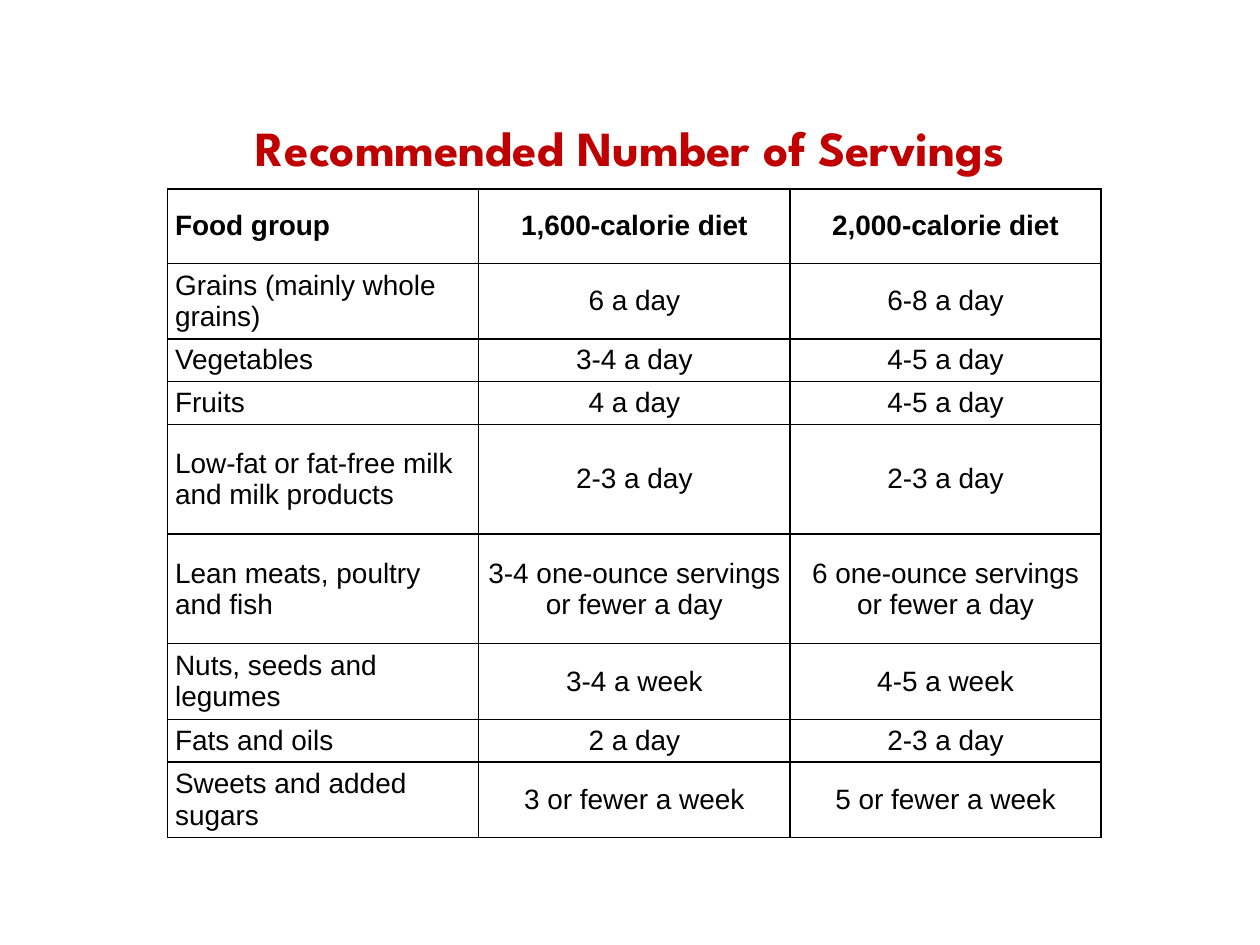
"""Build a slide with a table of recommended food servings."""
from lxml.etree import SubElement
from pptx import Presentation
from pptx.dml.color import RGBColor
from pptx.enum.text import MSO_ANCHOR, PP_ALIGN
from pptx.oxml.ns import qn
from pptx.util import Inches, Pt

TITLE = "Recommended Number of Servings"
ROWS = [
    (0.59, "Food group", "1,600-calorie diet", "2,000-calorie diet"),
    (0.6, "Grains (mainly whole grains)", "6 a day", "6-8 a day"),
    (0.34, "Vegetables", "3-4 a day", "4-5 a day"),
    (0.34, "Fruits", "4 a day", "4-5 a day"),
    (0.87, "Low-fat or fat-free milk and milk products", "2-3 a day", "2-3 a day"),
    (0.87, "Lean meats, poultry and fish", "3-4 one-ounce servings or fewer a day",
     "6 one-ounce servings or fewer a day"),
    (0.6, "Nuts, seeds and legumes", "3-4 a week", "4-5 a week"),
    (0.34, "Fats and oils", "2 a day", "2-3 a day"),
    (0.6, "Sweets and added sugars", "3 or fewer a week", "5 or fewer a week"),
]
COL_WIDTH = 2.47
TITLE_FONT = {"name": "League Spartan", "size": Pt(28), "bold": True}
CELL_FONT = {"name": "Arial", "size": Pt(16)}
CELL_FORMAT = {
    "vertical_anchor": MSO_ANCHOR.MIDDLE,
    "margin_left": Inches(0.06), "margin_right": Inches(0.06),
    "margin_top": Inches(0.03), "margin_bottom": Inches(0.03),
}


def set_attrs(obj, values):
    for name, value in values.items():
        setattr(obj, name, value)


def set_color(color, value):
    color.rgb = RGBColor.from_string(value)


def write(tf, text, font, color, align):
    p = tf.paragraphs[0]
    p.alignment = align
    r = p.add_run()
    r.text = text
    set_attrs(r.font, font)
    set_color(r.font.color, color)


def add_borders(cell, color="000000", width=Pt(1)):
    tc_pr = cell._tc.get_or_add_tcPr()
    for i, side in enumerate(("lnL", "lnR", "lnT", "lnB")):
        ln = SubElement(tc_pr, qn(f"a:{side}"), w=str(int(width)))
        fill = SubElement(ln, qn("a:solidFill"))
        SubElement(fill, qn("a:srgbClr"), val=color)
        tc_pr.insert(i, ln)


def add_title(s):
    sp = s.shapes.add_textbox(Inches(1), Inches(0.75), Inches(8), Inches(0.83))
    tf = sp.text_frame
    set_attrs(tf, {"word_wrap": True, "vertical_anchor": MSO_ANCHOR.MIDDLE})
    write(tf, TITLE, TITLE_FONT, "C00000", PP_ALIGN.CENTER)


def add_servings(s):
    n_cols = len(ROWS[0]) - 1
    height = sum(row[0] for row in ROWS)
    table = s.shapes.add_table(len(ROWS), n_cols, Inches(1.33), Inches(1.5),
                               Inches(COL_WIDTH * n_cols), Inches(height)).table
    for col in table.columns:
        col.width = Inches(COL_WIDTH)
    for i, (row_height, *texts) in enumerate(ROWS):
        table.rows[i].height = Inches(row_height)
        for j, text in enumerate(texts):
            cell = table.cell(i, j)
            set_attrs(cell, CELL_FORMAT)
            cell.fill.background()
            add_borders(cell)
            align = PP_ALIGN.CENTER if j else PP_ALIGN.LEFT
            write(cell.text_frame, text, {**CELL_FONT, "bold": i == 0}, "000000", align)


def main():
    prs = Presentation()
    set_attrs(prs, {"slide_width": Inches(10), "slide_height": Inches(7.5)})
    s = prs.slides.add_slide(prs.slide_layouts[6])
    add_title(s)
    add_servings(s)
    prs.save("out.pptx")


if __name__ == "__main__":
    main()
